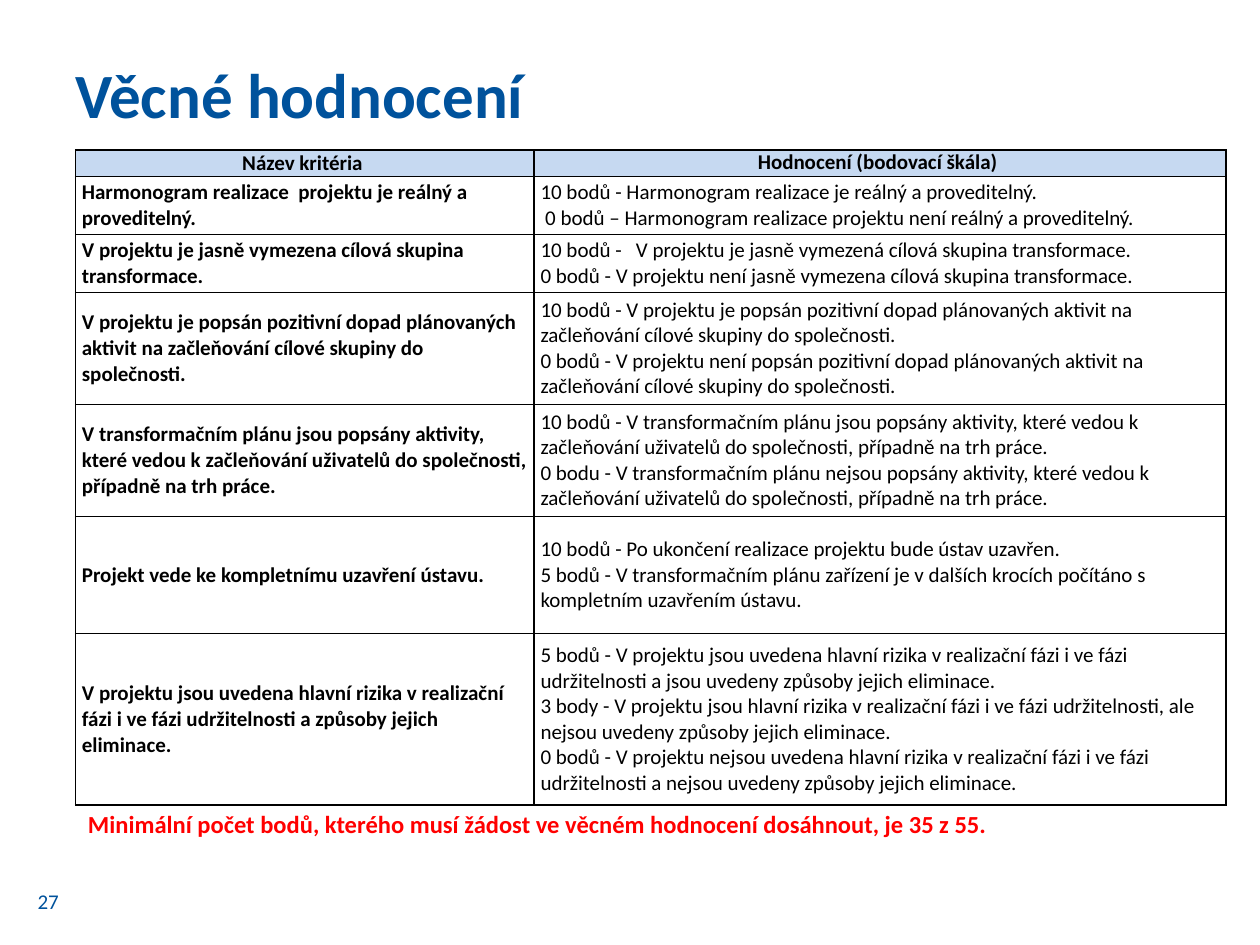
from lxml import etree
from pptx import Presentation
from pptx.dml.color import RGBColor
from pptx.enum.text import MSO_ANCHOR, PP_ALIGN
from pptx.oxml.ns import qn
from pptx.util import Inches, Pt

BLUE = RGBColor(0x00, 0x52, 0x9C)
RED = RGBColor(0xFF, 0x00, 0x00)
BLACK = RGBColor(0x00, 0x00, 0x00)
PALE = RGBColor(0xC6, 0xD9, 0xF1)
TOP, MID, LOW = MSO_ANCHOR.TOP, MSO_ANCHOR.MIDDLE, MSO_ANCHOR.BOTTOM
LEFT, CENTER = PP_ALIGN.LEFT, PP_ALIGN.CENTER

# The grid has 100 columns and 75 rows.
COLS, ROWS = 100, 75
WIDTHS = (36.4, 54.9)
HEIGHTS = (2.1, 4.6, 4.6, 8.9, 8.9, 9.3, 13.6)

HEADS = ("Název kritéria ", "Hodnocení (bodovací škála) ")
ITEMS = (
    ("Harmonogram realizace  projektu je reálný a proveditelný.",
     ("10 bodů - Harmonogram realizace je reálný a proveditelný.",
      " 0 bodů – Harmonogram realizace projektu není reálný a proveditelný.")),
    ("V projektu je jasně vymezena cílová skupina transformace.",
     ("10 bodů -   V projektu je jasně vymezená cílová skupina transformace.",
      "0 bodů - V projektu není jasně vymezena cílová skupina transformace.")),
    ("V projektu je popsán pozitivní dopad plánovaných aktivit na "
     "začleňování cílové skupiny do společnosti.",
     ("10 bodů - V projektu je popsán pozitivní dopad plánovaných aktivit na "
      "začleňování cílové skupiny do společnosti.",
      "0 bodů - V projektu není popsán pozitivní dopad plánovaných aktivit na "
      "začleňování cílové skupiny do společnosti.")),
    ("V transformačním plánu jsou popsány aktivity, které vedou k "
     "začleňování uživatelů do společnosti, případně na trh práce.",
     ("10 bodů - V transformačním plánu jsou popsány aktivity, které vedou k "
      "začleňování uživatelů do společnosti, případně na trh práce.",
      "0 bodu - V transformačním plánu nejsou popsány aktivity, které vedou k "
      "začleňování uživatelů do společnosti, případně na trh práce.")),
    ("Projekt vede ke kompletnímu uzavření ústavu.",
     ("10 bodů - Po ukončení realizace projektu bude ústav uzavřen.",
      "5 bodů - V transformačním plánu zařízení je v dalších krocích počítáno s "
      "kompletním uzavřením ústavu. ")),
    ("V projektu jsou uvedena hlavní rizika v realizační fázi i ve fázi "
     "udržitelnosti a způsoby jejich eliminace.",
     ("5 bodů - V projektu jsou uvedena hlavní rizika v realizační fázi i ve fázi "
      "udržitelnosti a jsou uvedeny způsoby jejich eliminace.",
      "3 body - V projektu jsou hlavní rizika v realizační fázi i ve fázi "
      "udržitelnosti, ale nejsou uvedeny způsoby jejich eliminace.",
      "0 bodů - V projektu nejsou uvedena hlavní rizika v realizační fázi i ve fázi "
      "udržitelnosti a nejsou uvedeny způsoby jejich eliminace.")),
)


class Deck:
    """Holds the style, the grid and the current slide."""

    font = "Calibri"
    size = 12
    rule = 1

    def __init__(self):
        self.prs = Presentation()
        self.prs.slide_width = Inches(10)
        self.prs.slide_height = Inches(7.5)
        self.slide = self.prs.slides.add_slide(self.prs.slide_layouts[6])

    def across(self, cols):
        return round(self.prs.slide_width * cols / COLS)

    def down(self, rows):
        return round(self.prs.slide_height * rows / ROWS)

    def put(self, frame, lines, size, color, bold, align=LEFT):
        """Fills a text frame with one paragraph for each line."""
        frame.word_wrap = True
        for num, line in enumerate(lines):
            para = frame.add_paragraph() if num else frame.paragraphs[0]
            para.text = line
            para.alignment = align
            font = para.font
            font.name, font.size, font.bold = self.font, Pt(size), bold
            font.color.rgb = color

    def text(self, x, y, w, h, words, size, color, bold=True, anchor=MID):
        box = self.slide.shapes.add_textbox(
            self.across(x), self.down(y), self.across(w), self.down(h))
        box.text_frame.vertical_anchor = anchor
        self.put(box.text_frame, [words], size, color, bold)

    def border(self, cell):
        props = cell._tc.get_or_add_tcPr()
        for num, side in enumerate(("a:lnL", "a:lnR", "a:lnT", "a:lnB")):
            line = etree.Element(qn(side), w=str(Pt(self.rule)))
            fill = etree.SubElement(line, qn("a:solidFill"))
            etree.SubElement(fill, qn("a:srgbClr"), val=str(BLACK))
            props.insert(num, line)

    def cell(self, cell, lines, bold, anchor=MID, align=LEFT, fill=None):
        cell.margin_left = cell.margin_right = Inches(0.05)
        cell.margin_top = cell.margin_bottom = 0
        cell.vertical_anchor = anchor
        if fill is None:
            cell.fill.background()
        else:
            cell.fill.solid()
            cell.fill.fore_color.rgb = fill
        self.border(cell)
        self.put(cell.text_frame, lines, self.size, BLACK, bold, align)

    def table(self, x, y, heads, items):
        grid = self.slide.shapes.add_table(
            len(HEIGHTS), len(WIDTHS), self.across(x), self.down(y),
            self.across(sum(WIDTHS)), self.down(sum(HEIGHTS))).table
        grid.horz_banding = False
        for col, width in zip(grid.columns, WIDTHS):
            col.width = self.across(width)
        for row, height in zip(grid.rows, HEIGHTS):
            row.height = self.down(height)
        for num, (head, anchor) in enumerate(zip(heads, (LOW, TOP))):
            self.cell(grid.cell(0, num), [head], True, anchor, CENTER, PALE)
        for num, (name, scale) in enumerate(items, 1):
            self.cell(grid.cell(num, 0), [name], True)
            self.cell(grid.cell(num, 1), scale, False)


def main():
    deck = Deck()
    deck.text(5, 2.9, 90, 9, "Věcné hodnocení", 36, BLUE)
    deck.table(6, 11.9, HEADS, ITEMS)
    deck.text(6, 63.7, 91.4, 3.4,
              "Minimální počet bodů, kterého musí žádost ve věcném hodnocení "
              "dosáhnout, je 35 z 55.", 14, RED, anchor=TOP)
    deck.text(2, 69.5, 5.5, 4, "27", 12, BLUE, bold=False)
    deck.prs.save("out.pptx")


if __name__ == "__main__":
    main()
